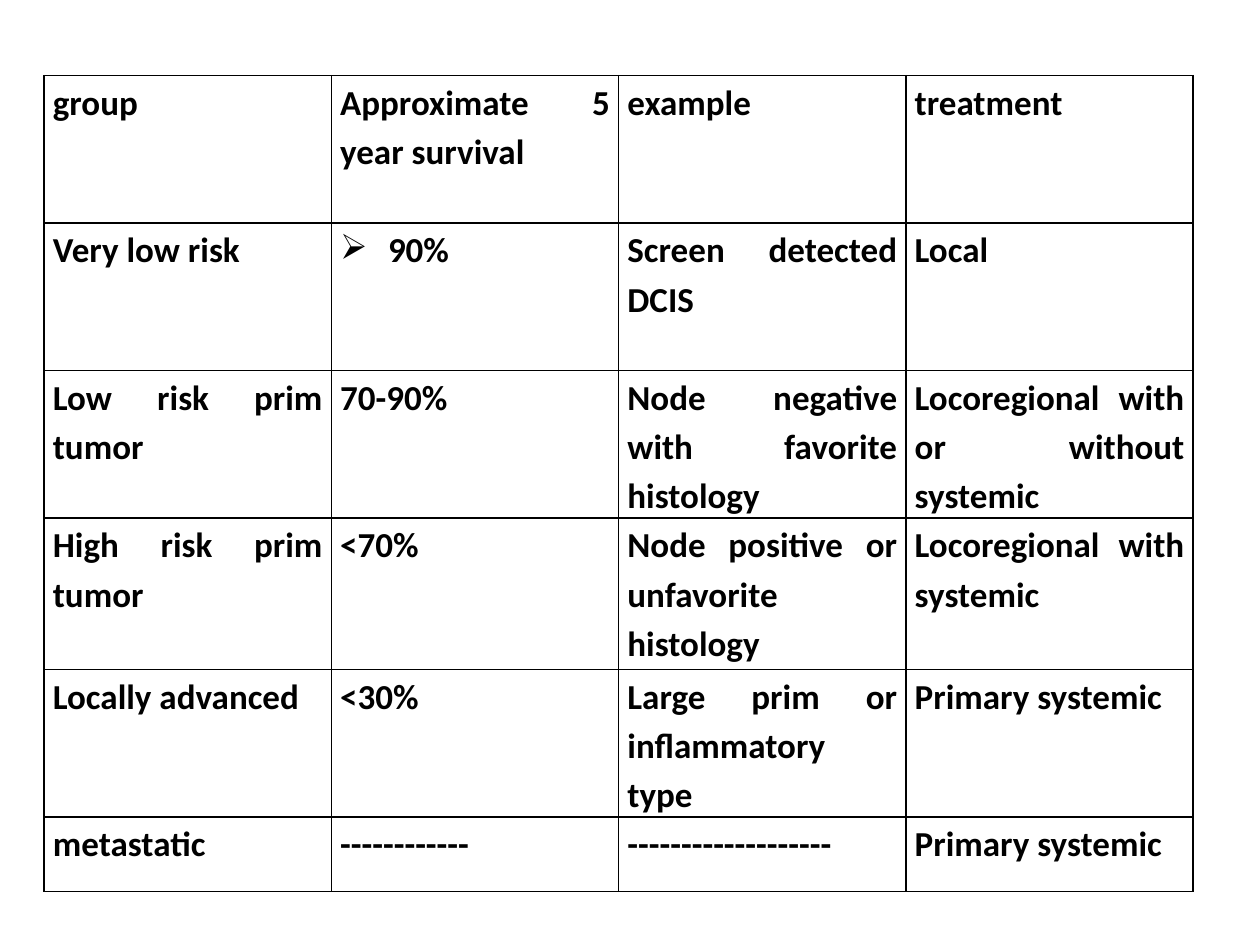
import pptx
import pptx.dml.color
import pptx.enum.text
import pptx.oxml
import pptx.oxml.ns
import pptx.util
from pptx.util import Inches

ROWS = [
    ("group", "Approximate 5 year survival", "example", "treatment"),
    ("Very low risk", "90%", "Screen detected DCIS", "Local"),
    ("Low risk prim tumor", "70-90%", "Node negative with favorite histology",
     "Locoregional with or without systemic"),
    ("High risk prim tumor", "<70%", "Node positive or unfavorite histology",
     "Locoregional with systemic"),
    ("Locally advanced", "<30%", "Large prim or inflammatory type",
     "Primary systemic"),
    ("metastatic", "-" * 12, "-" * 19, "Primary systemic"),
]
HEIGHTS = [1.17, 1.17, 1.17, 1.2, 1.17, 0.59]
WIDTH = 2.28
INK = "000000"
ARROW_AT = (1, 1)


def color(code):
    return pptx.dml.color.RGBColor.from_string(code)


def add_edges(cell):
    """Draw a thin line on each side of a cell."""
    props = cell._tc.get_or_add_tcPr()
    for side in "LRTB":
        props.append(pptx.oxml.parse_xml(
            f'<a:ln{side} {pptx.oxml.ns.nsdecls("a")} w="{pptx.util.Pt(1)}">'
            f'<a:solidFill><a:srgbClr val="{INK}"/></a:solidFill></a:ln{side}>'))


def add_arrow(para):
    """Give a paragraph an arrow bullet with a hanging indent."""
    props = para._p.get_or_add_pPr()
    props.set("marL", str(Inches(0.38)))
    props.set("indent", str(-Inches(0.38)))
    props.append(pptx.oxml.parse_xml(
        f'<a:buChar {pptx.oxml.ns.nsdecls("a")} char="➢"/>'))


def fill_cell(cell, text, arrow):
    # Frame: edges come before the fill in the cell's XML
    add_edges(cell)
    cell.fill.background()
    cell.margin_left = cell.margin_right = Inches(0.07)
    cell.margin_top = cell.margin_bottom = 0

    # Text
    cell.text = text
    para = cell.text_frame.paragraphs[0]
    if arrow:
        add_arrow(para)
    para.alignment = pptx.enum.text.PP_ALIGN.JUSTIFY
    para.line_spacing = 1.15
    font = para.font
    font.name = "Calibri"
    font.size = pptx.util.Pt(20)
    font.bold = True
    font.color.rgb = color(INK)


def add_grid(slide):
    """Add the table of risk groups."""
    count = len(ROWS[0])
    table = slide.shapes.add_table(
        len(ROWS), count, Inches(0.35), Inches(0.6),
        Inches(WIDTH * count), Inches(sum(HEIGHTS))).table
    table.first_row = table.horz_banding = False
    for col in table.columns:
        col.width = Inches(WIDTH)
    for r, (texts, height) in enumerate(zip(ROWS, HEIGHTS)):
        table.rows[r].height = Inches(height)
        for c, text in enumerate(texts):
            fill_cell(table.cell(r, c), text, (r, c) == ARROW_AT)


def main():
    deck = pptx.Presentation()
    deck.slide_width, deck.slide_height = Inches(10), Inches(7.5)
    # Blank layout: the slide holds only the table
    slide = deck.slides.add_slide(deck.slide_layouts[6])
    add_grid(slide)
    deck.save("out.pptx")


if __name__ == "__main__":
    main()
